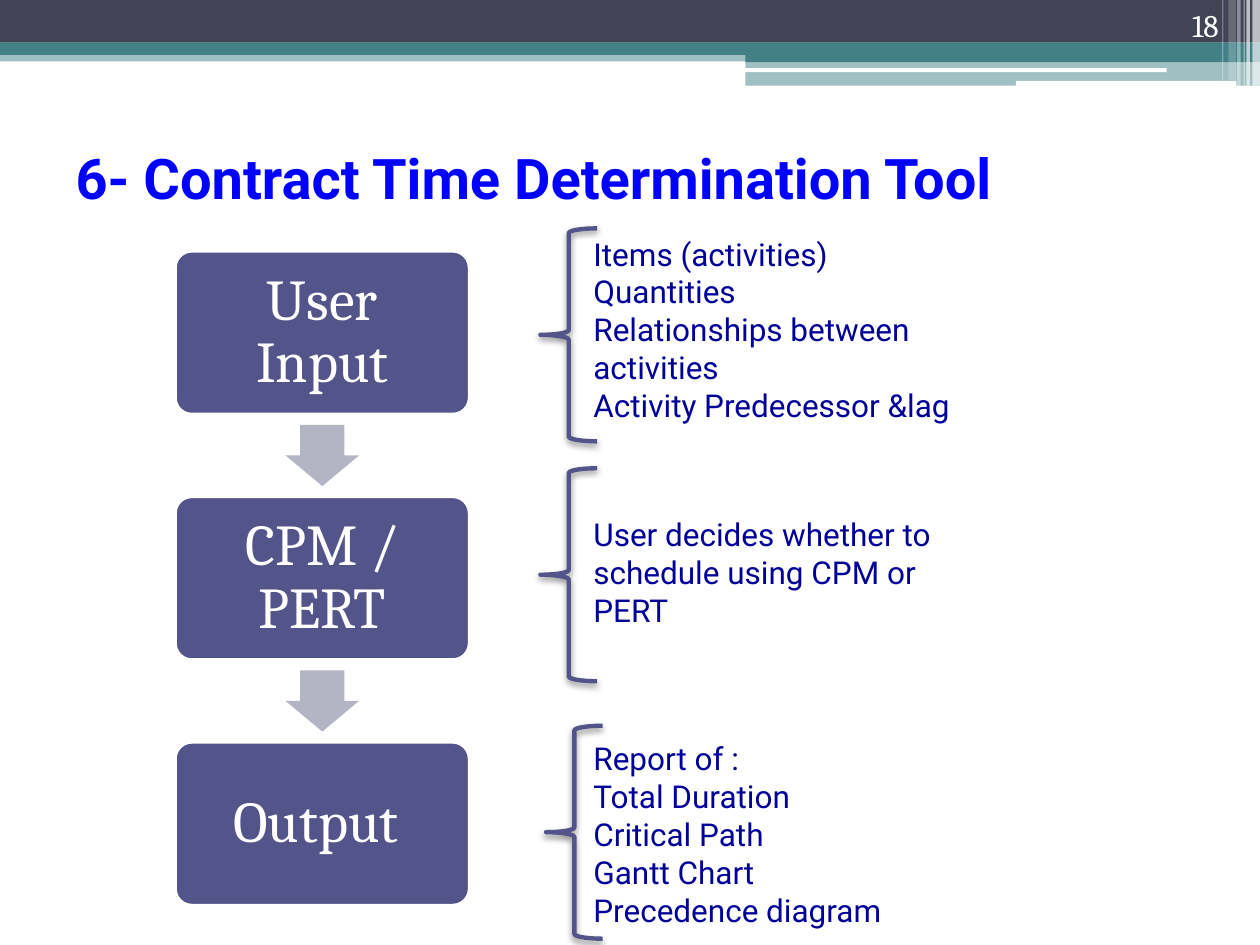
from lxml import etree
from pptx import Presentation
from pptx.dml.color import RGBColor
from pptx.enum.shapes import MSO_SHAPE
from pptx.enum.text import MSO_ANCHOR, PP_ALIGN
from pptx.oxml import parse_xml
from pptx.oxml.ns import qn
from pptx.util import Pt

RECT, ROUND = MSO_SHAPE.RECTANGLE, MSO_SHAPE.ROUNDED_RECTANGLE
DOWN_ARROW, LEFT_BRACE = MSO_SHAPE.DOWN_ARROW, MSO_SHAPE.LEFT_BRACE
MIDDLE, BOTTOM, TOP = MSO_ANCHOR.MIDDLE, MSO_ANCHOR.BOTTOM, MSO_ANCHOR.TOP
LEFT, CENTER, RIGHT = PP_ALIGN.LEFT, PP_ALIGN.CENTER, PP_ALIGN.RIGHT

WHITE = RGBColor(0xFF, 0xFF, 0xFF)
SLATE = RGBColor(0x42, 0x44, 0x56)
TEAL = RGBColor(0x43, 0x80, 0x86)
PURPLE = RGBColor(0x53, 0x54, 0x8A)
GREY = RGBColor(0xB3, 0xB4, 0xC4)
BLUE = RGBColor(0x00, 0x00, 0xFF)
NAVY = RGBColor(0x00, 0x00, 0x99)

SHADOW = (
    '<a:effectLst xmlns:a="http://schemas.openxmlformats.org/drawingml/2006/main">'
    '<a:outerShdw blurRad="50800" dist="25400" dir="5400000" rotWithShape="0">'
    '<a:srgbClr val="000000"><a:alpha val="45000"/></a:srgbClr>'
    '</a:outerShdw></a:effectLst>'
)

prs = Presentation()
prs.slide_width, prs.slide_height = Pt(720), Pt(540)
s = prs.slides.add_slide(prs.slide_layouts[5])


def add_block(kind, box, color, alpha=100):
    sp = s.shapes.add_shape(kind, *[Pt(v) for v in box])
    sp.shadow.inherit = False
    sp.line.fill.background()
    sp.fill.solid()
    sp.fill.fore_color.rgb = color
    if alpha < 100:
        clr = sp.fill._xPr.find(qn("a:solidFill"))[0]
        etree.SubElement(clr, qn("a:alpha")).set("val", str(alpha * 1000))
    return sp


def write(sp, lines, font, anchor=TOP, align=LEFT, **para):
    tf = sp.text_frame
    tf.word_wrap = True
    tf.vertical_anchor = anchor
    for i, line in enumerate(lines):
        p = tf.paragraphs[0] if i == 0 else tf.add_paragraph()
        for name, value in {"alignment": align, **para}.items():
            setattr(p, name, value)
        r = p.add_run()
        r.text = line
        for name, value in font.items():
            if name == "color":
                r.font.color.rgb = value
            else:
                setattr(r.font, name, value)


# Header bands
for kind, box, color, alpha in [
    (RECT, (0, 28.5, 720, 6.7), TEAL, 50),
    (RECT, (0, 0, 720, 24.4), SLATE, 100),
    (RECT, (0, 24.2, 720, 7.2), TEAL, 100),
    (RECT, (426, 28.3, 294, 7.2), TEAL, 100),
    (RECT, (426, 34.7, 294, 14.2), TEAL, 50),
    (ROUND, (425.5, 39, 241.2, 2.2), WHITE, 100),
    (ROUND, (580.5, 46.3, 126, 2.9), WHITE, 100),
]:
    add_block(kind, box, color, alpha)

# Thin vertical stripes at the right edge
for x, w, h, alpha in [
    (715.6, 4.4, 49, 65), (712.2, 2, 49, 65), (710.6, 0.7, 49, 60),
    (707, 2, 49, 40), (702, 4.3, 46, 20), (698.4, 0.7, 46, 30),
]:
    add_block(RECT, (x, 0, w, h), WHITE, alpha)

# Title
title = s.shapes.title
title.left, title.top, title.width, title.height = Pt(36), Pt(59), Pt(648), Pt(84)
write(title, ["6- Contract Time Determination Tool"],
      {"name": "Roboto", "size": Pt(32), "bold": True, "color": BLUE}, MIDDLE)

# Slide number
number = s.shapes.add_textbox(Pt(643.7), Pt(0), Pt(59.8), Pt(28.8))
write(number, ["18"], {"name": "Cambria", "size": Pt(18), "color": WHITE}, BOTTOM, RIGHT)

# Steps with arrows between them
STEP_X, STEP_Y, STEP_W, STEP_H, PITCH = 100.3, 143.6, 167.8, 93, 140.3
ARROW_W, ARROW_H = 42, 35
STEPS = ["User Input", "CPM / PERT", "Output "]
for i, step in enumerate(STEPS):
    y = STEP_Y + i * PITCH
    sp = add_block(ROUND, (STEP_X, y, STEP_W, STEP_H), PURPLE)
    sp.adjustments[0] = 0.1
    sp.line.color.rgb = WHITE
    sp.line.width = Pt(1.5)
    tf = sp.text_frame
    for side in ("left", "right", "top", "bottom"):
        setattr(tf, f"margin_{side}", Pt(10))
    write(sp, [step], {"name": "Cambria", "size": Pt(33), "color": WHITE},
          MIDDLE, CENTER, line_spacing=0.9)
    if i < len(STEPS) - 1:
        arrow_x = STEP_X + (STEP_W - ARROW_W) / 2
        arrow_y = y + STEP_H + (PITCH - STEP_H - ARROW_H) / 2
        arrow = add_block(DOWN_ARROW, (arrow_x, arrow_y, ARROW_W, ARROW_H), GREY)
        arrow.adjustments[0] = 0.6
        arrow.adjustments[1] = 0.5

# Details of each step with their braces
DETAILS = [
    (130.5, 116.6, 308.8, 130.5,
     ["Items (activities)", "Quantities", "Relationships between activities",
      "Activity Predecessor &lag"]),
    (291, 72.7, 308.8, 267.6, ["User decides whether to schedule using CPM or PERT"]),
    (419, 116.6, 312, 414.7,
     ["Report of :", "Total Duration", "Critical Path", "Gantt Chart",
      "Precedence diagram"]),
]
for y, h, brace_x, brace_y, lines in DETAILS:
    sp = s.shapes.add_textbox(Pt(332), Pt(y), Pt(238.3), Pt(h))
    write(sp, lines, {"name": "Roboto", "size": Pt(18), "color": NAVY})
    brace = s.shapes.add_shape(LEFT_BRACE, Pt(brace_x), Pt(brace_y), Pt(32.4), Pt(121.7))
    brace.fill.background()
    brace.line.color.rgb = PURPLE
    brace.line.width = Pt(2.5)
    brace._element.spPr.append(parse_xml(SHADOW))

prs.save("out.pptx")
